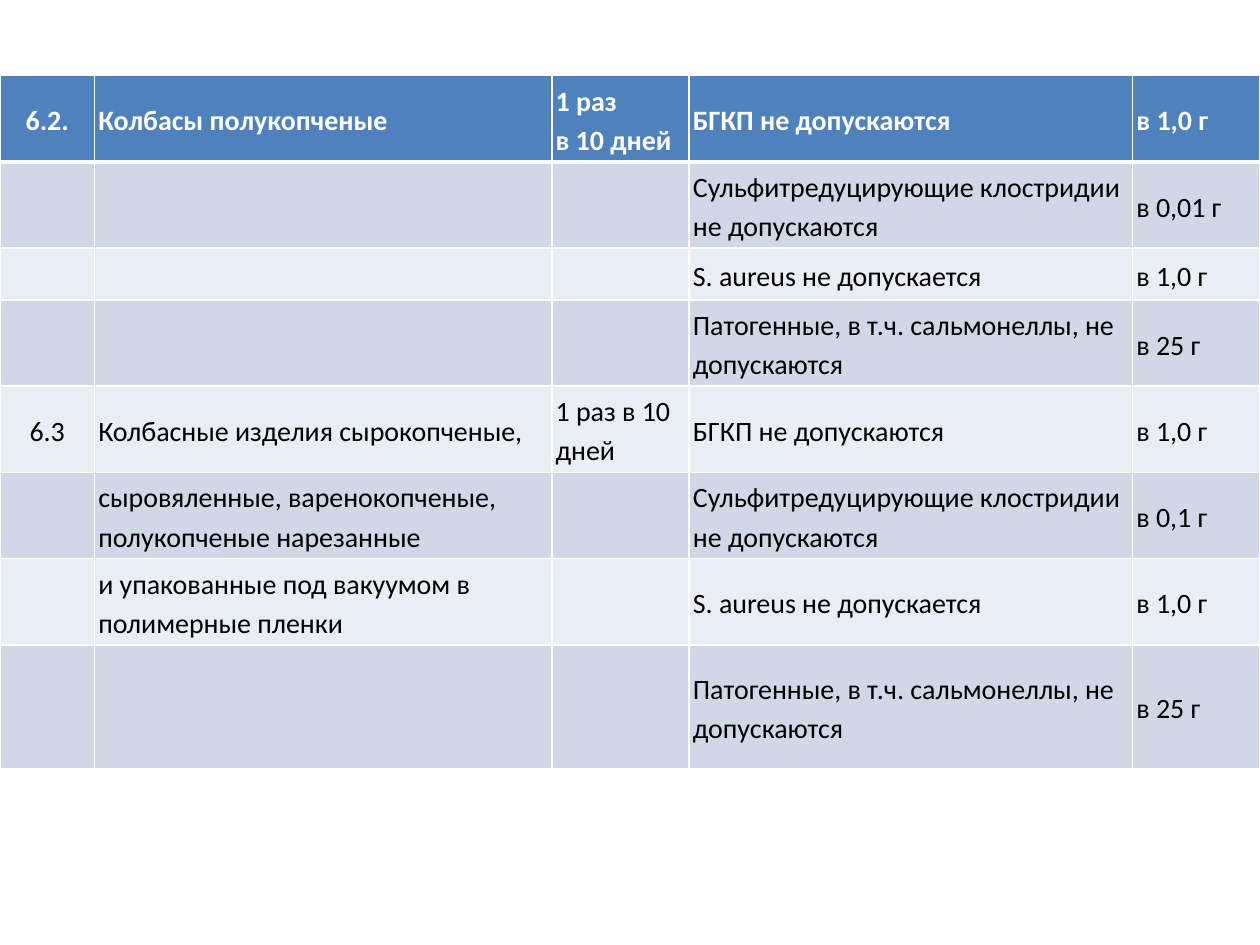
from dataclasses import dataclass

import pptx
import pptx.dml.color
import pptx.enum.text
import pptx.oxml
import pptx.oxml.ns
import pptx.table
import pptx.util

RGBColor = pptx.dml.color.RGBColor
HEADER_BLUE = RGBColor(0x4F, 0x81, 0xBD)
BAND_DARK = RGBColor(0xD0, 0xD8, 0xE8)
BAND_LIGHT = RGBColor(0xE9, 0xED, 0xF4)
WHITE = RGBColor(0xFF, 0xFF, 0xFF)
BLACK = RGBColor(0x00, 0x00, 0x00)

SLIDE_WIDTH = pptx.util.Inches(10)
SLIDE_HEIGHT = pptx.util.Inches(7.5)
TABLE_TOP = 0.08  # share of the slide's height
COLUMN_PERCENTS = (7.5, 36.3, 10.9, 35.2, 10.1)
ONE_LINE, TWO_LINES, LAST_ROW = 0.41, 0.67, 0.98  # row heights in inches
CELL_MARGIN = pptx.util.Inches(0.03)

COLIFORMS = "БГКП не допускаются"
CLOSTRIDIA = "Сульфитредуцирующие клостридии не допускаются"
AUREUS = "S. aureus не допускается"
PATHOGENS = "Патогенные, в т.ч. сальмонеллы, не допускаются"


@dataclass(frozen=True)
class NormRow:
    indicator: str
    sample: str
    number: str = ""
    product: str = ""
    frequency: str = ""
    height: float = TWO_LINES

    def texts(self) -> tuple[str, ...]:
        return self.number, self.product, self.frequency, self.indicator, self.sample


NORM_ROWS = (
    NormRow(COLIFORMS, "в 1,0 г", "6.2.", "Колбасы полукопченые", "1 раз\nв 10 дней"),
    NormRow(CLOSTRIDIA, "в 0,01 г"),
    NormRow(AUREUS, "в 1,0 г", height=ONE_LINE),
    NormRow(PATHOGENS, "в 25 г"),
    NormRow(COLIFORMS, "в 1,0 г", "6.3", "Колбасные изделия сырокопченые,", "1 раз в 10 дней"),
    NormRow(CLOSTRIDIA, "в 0,1 г", product="сыровяленные, варенокопченые, полукопченые нарезанные"),
    NormRow(AUREUS, "в 1,0 г", product="и упакованные под вакуумом в полимерные пленки"),
    NormRow(PATHOGENS, "в 25 г", height=LAST_ROW),
)


def set_borders(cell: pptx.table._Cell, top: float, bottom: float) -> None:
    """Draw white borders, 1 pt at the sides; top and bottom are in points."""
    properties = cell._tc.get_or_add_tcPr()
    widths = {"lnL": 1, "lnR": 1, "lnT": top, "lnB": bottom}
    for position, (side, width) in enumerate(widths.items()):
        border = pptx.oxml.parse_xml(
            f'<a:{side} {pptx.oxml.ns.nsdecls("a")} w="{pptx.util.Pt(width)}">'
            f'<a:solidFill><a:srgbClr val="{WHITE}"/></a:solidFill></a:{side}>'
        )
        properties.insert(position, border)


def write_text(cell: pptx.table._Cell, text: str, centred: bool, header: bool) -> None:
    cell.vertical_anchor = pptx.enum.text.MSO_ANCHOR.MIDDLE
    cell.margin_left = cell.margin_right = CELL_MARGIN
    cell.margin_top = cell.margin_bottom = CELL_MARGIN
    para = cell.text_frame.paragraphs[0]
    para.line_spacing = 1.15
    alignments = pptx.enum.text.PP_ALIGN
    para.alignment = alignments.CENTER if centred else alignments.LEFT
    for line_number, line in enumerate(text.split("\n")):
        if line_number:
            para.add_line_break()
        run = para.add_run()
        run.text = line
        run.font.name = "Calibri"
        run.font.size = pptx.util.Pt(16)
        run.font.bold = header
        run.font.color.rgb = WHITE if header else BLACK


def fill_row(table: pptx.table.Table, row_index: int, norm: NormRow) -> None:
    header = row_index == 0
    band = BAND_DARK if row_index % 2 else BAND_LIGHT
    table.rows[row_index].height = pptx.util.Inches(norm.height)
    for column_index, text in enumerate(norm.texts()):
        cell = table.cell(row_index, column_index)
        cell.fill.solid()
        cell.fill.fore_color.rgb = HEADER_BLUE if header else band
        set_borders(cell, top=3 if row_index == 1 else 1, bottom=3 if header else 1)
        if text:
            write_text(cell, text, centred=column_index == 0, header=header)


def main() -> None:
    deck = pptx.Presentation()
    deck.slide_width, deck.slide_height = SLIDE_WIDTH, SLIDE_HEIGHT
    page = deck.slides.add_slide(deck.slide_layouts[6])
    table_height = pptx.util.Inches(sum(norm.height for norm in NORM_ROWS))
    table = page.shapes.add_table(
        len(NORM_ROWS), len(COLUMN_PERCENTS),
        0, int(SLIDE_HEIGHT * TABLE_TOP), SLIDE_WIDTH, table_height,
    ).table
    for column, percent in zip(table.columns, COLUMN_PERCENTS):
        column.width = int(SLIDE_WIDTH * percent / 100)
    for row_index, norm in enumerate(NORM_ROWS):
        fill_row(table, row_index, norm)
    deck.save("out.pptx")


if __name__ == "__main__":
    main()
